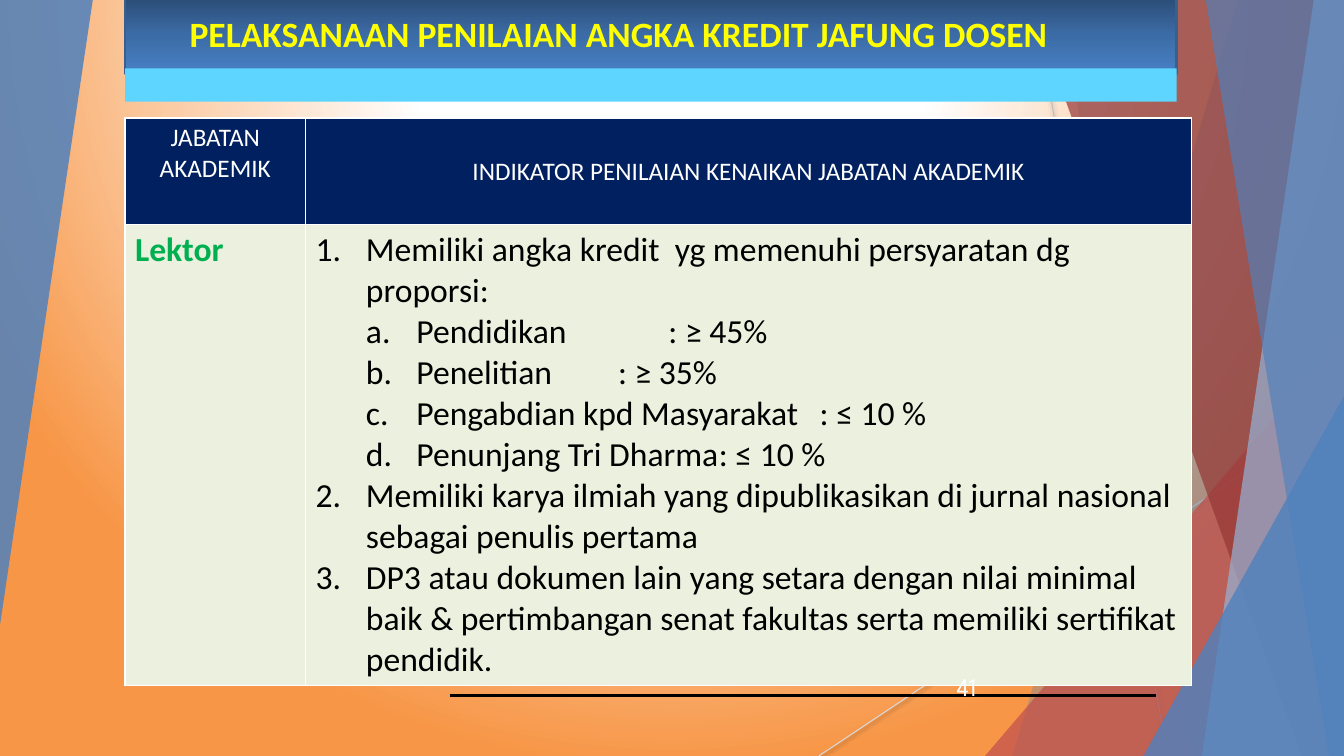
from lxml.etree import SubElement
from pptx import Presentation
from pptx.dml.color import RGBColor
from pptx.enum.shapes import MSO_CONNECTOR, MSO_SHAPE
from pptx.enum.text import MSO_ANCHOR, MSO_AUTO_SIZE, PP_ALIGN
from pptx.oxml.ns import qn
from pptx.util import Inches, Pt

COLORS = {
    "white": "FFFFFF", "black": "000000", "orange": "F79646", "blue": "4F81BD",
    "pale_blue": "95B3D7", "red": "C0504D", "dark_red": "953735", "cyan": "5DD5FF",
    "bar_top": "2A4C75", "bar_mid": "3C6CA6", "bar_end": "4780C5", "bar_line": "3A5F8C",
    "navy": "002060", "cream": "EBF1DE", "green": "00B050", "yellow": "FFFF00",
    "gray": "BFBFBF", "light_gray": "D9D9D9", "number": "FEFFFF",
}
W, H = 13.33, 7.5
HEAD = {"size": Pt(18), "color": "white", "bold": False}
LIST = {"size": Pt(24), "color": "black", "bold": False}
NUMBER, LETTER = "arabicPeriod", "alphaLcPeriod"
ITEMS = [
    ("Memiliki angka kredit  yg memenuhi persyaratan dg proporsi:", NUMBER, 0.5, 1),
    ("Pendidikan \t\t: ≥ 45%", LETTER, 1, 1),
    ("Penelitian \t\t: ≥ 35%", LETTER, 1, 1),
    ("Pengabdian kpd Masyarakat \t: ≤ 10 %", LETTER, 1, 1),
    ("Penunjang Tri Dharma\t: ≤ 10 %", LETTER, 1, 1),
    ("Memiliki karya ilmiah yang dipublikasikan di jurnal nasional sebagai penulis pertama",
     NUMBER, 0.5, 2),
    ("DP3 atau dokumen lain yang setara dengan nilai minimal baik & pertimbangan senat "
     "fakultas serta memiliki sertifikat pendidik.", NUMBER, 0.5, 2),
]


class Deck:
    """Holds the style and the current slide, with a method per kind of element."""

    def __init__(self):
        self.prs = Presentation()
        self.prs.slide_width, self.prs.slide_height = Inches(W), Inches(H)
        self.s = self.prs.slides.add_slide(self.prs.slide_layouts[5])

    def rgb(self, name):
        return RGBColor.from_string(COLORS[name])

    def node(self, parent, tag, **attrs):
        return SubElement(parent, qn(tag), {k: str(v) for k, v in attrs.items()})

    def gradient(self, fill, root, stops):
        fill.gradient()
        grad = root.find(".//" + qn("a:gradFill"))
        for child in list(grad):
            grad.remove(child)
        lst = self.node(grad, "a:gsLst")
        for pos, color in stops:
            gs = self.node(lst, "a:gs", pos=pos * 1000)
            self.node(gs, "a:srgbClr", val=COLORS[color])
        return grad

    def background(self, stops):
        grad = self.gradient(self.s.background.fill, self.s.element, stops)
        circle = self.node(grad, "a:path", path="circle")
        self.node(circle, "a:fillToRect", l=50000, t=-80000, r=50000, b=180000)

    def paint(self, sp, color, alpha=100):
        sp.shadow.inherit = False
        sp.line.fill.background()
        sp.fill.solid()
        sp.fill.fore_color.rgb = self.rgb(color)
        if alpha < 100:
            clr = sp._element.spPr.find(".//" + qn("a:srgbClr"))
            self.node(clr, "a:alpha", val=alpha * 1000)
        return sp

    def band(self, top, bottom, color, alpha):
        fb = self.s.shapes.build_freeform(Inches(top), 0)
        corners = [(W, 0), (W, H), (bottom, H)]
        fb.add_line_segments([(Inches(x), Inches(y)) for x, y in corners])
        self.paint(fb.convert_to_shape(), color, alpha)

    def shape(self, kind, box, color, alpha=100):
        sp = self.s.shapes.add_shape(kind, *map(Inches, box))
        return self.paint(sp, color, alpha)

    def triangle(self, box, color, alpha, rotation=0):
        sp = self.shape(MSO_SHAPE.ISOSCELES_TRIANGLE, box, color, alpha)
        sp.adjustments[0] = 1.0
        sp.rotation = rotation

    def bar(self, box, stops, line):
        sp = self.shape(MSO_SHAPE.RECTANGLE, box, line)
        grad = self.gradient(sp.fill, sp._element, stops)
        self.node(grad, "a:lin", ang=5400000, scaled=0)
        sp.line.color.rgb = self.rgb(line)
        sp.line.width = Pt(2)

    def line(self, ends, color, width, shadow=False):
        cx = self.s.shapes.add_connector(MSO_CONNECTOR.STRAIGHT, *map(Inches, ends))
        cx.line.color.rgb = self.rgb(color)
        cx.line.width = Pt(width)
        effects = self.node(cx._element.spPr, "a:effectLst")
        if shadow:
            shd = self.node(effects, "a:outerShdw", blurRad=Pt(3.1), dist=Pt(1.6), dir=5400000)
            clr = self.node(shd, "a:srgbClr", val=COLORS["black"])
            self.node(clr, "a:alpha", val=38000)

    def run(self, p, text, fmt):
        r = p.add_run()
        r.text = text
        for key, value in {"name": "Calibri", **fmt}.items():
            if key == "color":
                r.font.color.rgb = self.rgb(value)
            else:
                setattr(r.font, key, value)

    def title(self, text, box, fmt):
        sp = self.s.shapes.title
        self.s.shapes._spTree.append(sp._element)
        for key, value in zip(("left", "top", "width", "height"), box):
            setattr(sp, key, Inches(value))
        tf = sp.text_frame
        tf.auto_size, tf.vertical_anchor = MSO_AUTO_SIZE.NONE, MSO_ANCHOR.MIDDLE
        tf.paragraphs[0].alignment = PP_ALIGN.LEFT
        self.run(tf.paragraphs[0], text, fmt)

    def text(self, text, box, fmt):
        tf = self.s.shapes.add_textbox(*map(Inches, box)).text_frame
        tf.word_wrap = True
        self.run(tf.paragraphs[0], text, fmt)

    def table(self, box, cols, rows):
        tbl = self.s.shapes.add_table(len(rows), len(cols), *map(Inches, box)).table
        for col, width in zip(tbl.columns, cols):
            col.width = Inches(width)
        for row, height in zip(tbl.rows, rows):
            row.height = Inches(height)
        return tbl

    def cell(self, cell, fill):
        tc_pr = cell._tc.get_or_add_tcPr()
        for side in "LRTB":
            ln = self.node(tc_pr, "a:ln" + side, w=Pt(1))
            self.node(self.node(ln, "a:solidFill"), "a:srgbClr", val=COLORS["white"])
        cell.fill.solid()
        cell.fill.fore_color.rgb = self.rgb(fill)
        return cell.text_frame.paragraphs[0]

    def numbered(self, tf, items, fmt):
        for i, (text, kind, indent, start) in enumerate(items):
            p = tf.add_paragraph() if i else tf.paragraphs[0]
            pPr = p._p.get_or_add_pPr()
            pPr.set("marL", str(Inches(indent)))
            pPr.set("indent", str(Inches(-0.5)))
            extra = {"startAt": start} if start > 1 else {}
            self.node(pPr, "a:buFont", typeface="+mj-lt")
            self.node(pPr, "a:buAutoNum", type=kind, **extra)
            self.run(p, text, fmt)


def main():
    d = Deck()
    d.background([(0, "white"), (35, "white"), (100, "orange")])
    d.line((10.25, 0, 11.58, H), "gray", 0.75, shadow=True)
    d.line((W, 4.03, 8.12, H), "light_gray", 0.75, shadow=True)
    d.band(12.28, 10.04, "blue", 30)
    d.band(10.5, 11.82, "blue", 20)
    d.triangle((9.77, 3.33, 3.56, 4.17), "red", 72)
    d.band(10.21, 12.91, "dark_red", 70)
    d.band(13.03, 11.92, "pale_blue", 70)
    d.band(11.96, 13.18, "blue", 65)
    d.triangle((11.34, 3.93, 1.99, 3.57), "blue", 80)
    d.triangle((0, 0, 0.92, 6.2), "blue", 85, rotation=180)

    d.bar((1.24, -0.03, 10.43, 0.76),
          [(0, "bar_top"), (50, "bar_mid"), (100, "bar_end")], "bar_line")
    d.shape(MSO_SHAPE.RECTANGLE, (1.24, 0.68, 10.43, 0.33), "cyan")
    d.line((4.46, 6.9, 11.47, 6.9), "black", 1.75)
    d.title("PELAKSANAAN PENILAIAN ANGKA KREDIT JAFUNG DOSEN", (1.78, -0.03, 9.45, 0.72),
            {"size": Pt(25.4), "color": "yellow", "bold": True})

    tbl = d.table((1.24, 1.17, 10.58, 5.56), (1.79, 8.79), (1.06, 4.5))
    heads = ("JABATAN AKADEMIK", "INDIKATOR PENILAIAN KENAIKAN JABATAN AKADEMIK")
    for col, head in enumerate(heads):
        p = d.cell(tbl.cell(0, col), "navy")
        p.alignment = PP_ALIGN.CENTER
        d.run(p, head, HEAD)
    tbl.cell(0, 1).vertical_anchor = MSO_ANCHOR.MIDDLE
    d.run(d.cell(tbl.cell(1, 0), "cream"), "Lektor",
          {"size": Pt(24), "color": "green", "bold": True})
    d.cell(tbl.cell(1, 1), "cream")
    d.numbered(tbl.cell(1, 1).text_frame, ITEMS, LIST)

    d.text("41", (9.39, 6.61, 0.75, 0.4),
           {"size": Pt(18), "color": "number", "name": "League Spartan"})
    d.prs.save("out.pptx")


if __name__ == "__main__":
    main()
